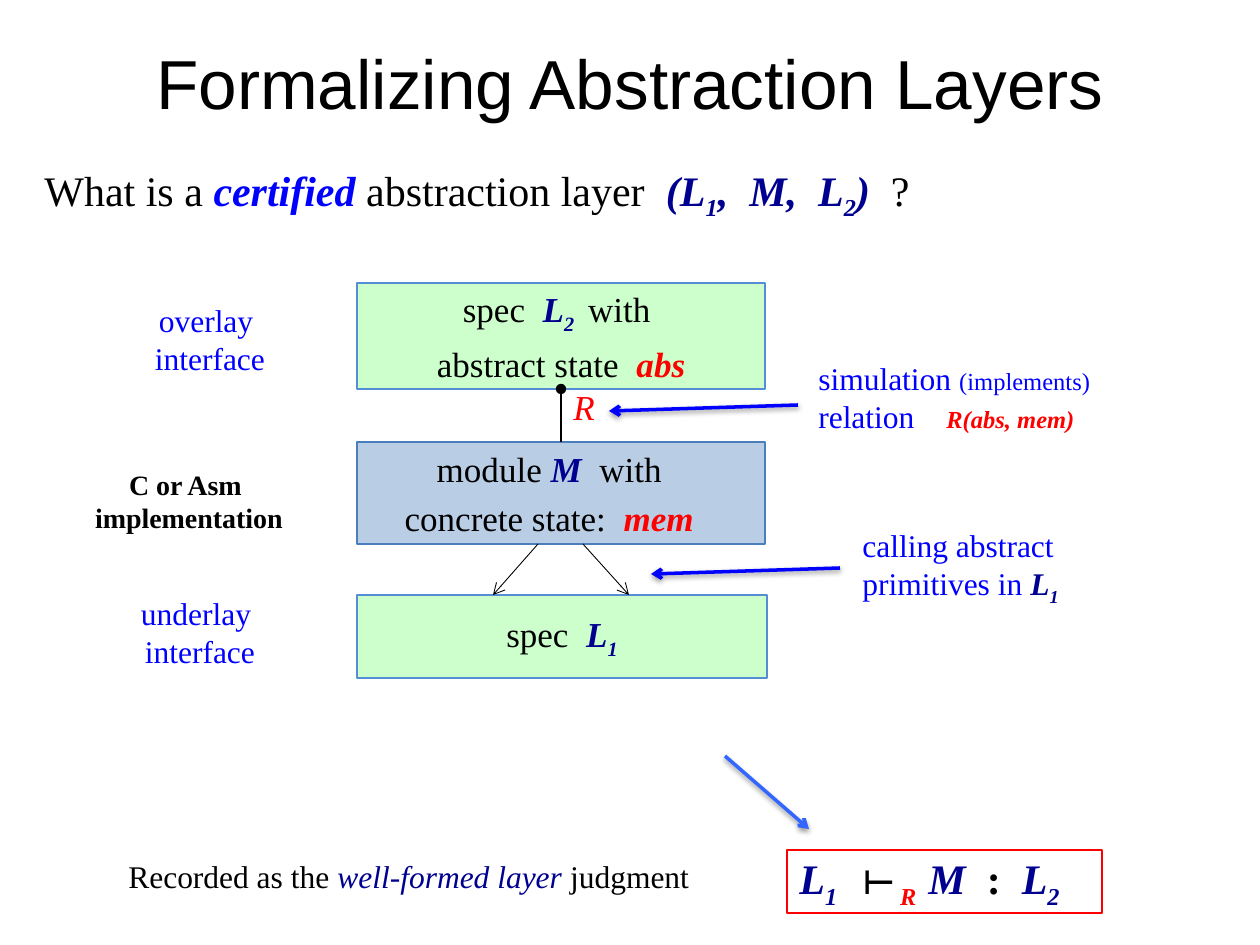
from lxml import etree
from pptx import Presentation
from pptx import util as u
from pptx.dml.color import RGBColor
from pptx.enum import shapes, text
from pptx.oxml.ns import qn

PX = 914400 / 126
SERIF = "Times New Roman"
LEFT, CENTER = text.PP_ALIGN.LEFT, text.PP_ALIGN.CENTER
TOP, MIDDLE = text.MSO_ANCHOR.TOP, text.MSO_ANCHOR.MIDDLE
BLACK, BLUE, NAVY, RED = "000000", "0000FF", "000090", "FF0000"
SKY, GREEN, STEEL = "3366FF", "CCFFCC", "B9CDE5"

STYLES = {
    "plain": (BLACK, {}),
    "strong": (BLACK, {"bold": True}),
    "note": (BLUE, {}),
    "small": (BLUE, {"size": u.Pt(14)}),
    "key": (BLUE, {"bold": True, "italic": True}),
    "math": (NAVY, {"bold": True, "italic": True}),
    "term": (NAVY, {"italic": True}),
    "state": (RED, {"bold": True, "italic": True}),
    "args": (RED, {"bold": True, "italic": True, "size": u.Pt(14)}),
    "relation": (RED, {"italic": True}),
}


def px(n):
    return u.Emu(round(n * PX))


def box(*lengths):
    return [px(n) for n in lengths]


def color(fmt, value):
    fmt.rgb = RGBColor.from_string(value)


def child(parent, tag, **attrs):
    return etree.SubElement(parent, qn(tag), {k: str(v) for k, v in attrs.items()})


def add_run(p, words, style, size):
    subscript = style.endswith("_sub")
    rgb, extra = STYLES[style.removesuffix("_sub")]
    r = p.add_run()
    r.text = words
    fmt = {"name": SERIF, "size": u.Pt(size), "bold": False, "italic": False}
    for name, value in (fmt | extra).items():
        setattr(r.font, name, value)
    color(r.font.color, rgb)
    if subscript:
        r.font._element.set("baseline", "-25000")


def fill_text(tf, lines, size, align=LEFT, anchor=TOP, gap=0, tab=None):
    fmt = {"word_wrap": True, "auto_size": text.MSO_AUTO_SIZE.NONE,
           "vertical_anchor": anchor}
    for name, value in fmt.items():
        setattr(tf, name, value)
    for i, line in enumerate(lines):
        p = tf.add_paragraph() if i else tf.paragraphs[0]
        if tab:
            tabs = child(p._p.get_or_add_pPr(), "a:tabLst")
            child(tabs, "a:tab", pos=px(tab), algn="l")
        p.alignment = align
        if i and gap:
            p.space_before = u.Pt(gap)
        for words, style in line:
            add_run(p, words, style, size)


def add_title(s, words):
    sp = s.shapes.title
    sp.left, sp.top, sp.width, sp.height = box(63, 38, 1134, 88)
    tf = sp.text_frame
    tf.auto_size = text.MSO_AUTO_SIZE.NONE
    tf.vertical_anchor = MIDDLE
    p = tf.paragraphs[0]
    p.alignment = CENTER
    r = p.add_run()
    r.text = words
    r.font.name, r.font.size = "Arial", u.Pt(39.6)
    color(r.font.color, BLACK)


def add_label(s, at, lines, size=18, align=LEFT, tab=None):
    sp = s.shapes.add_textbox(*box(*at))
    fill_text(sp.text_frame, lines, size, align, tab=tab)


def add_block(s, at, lines, fill, line, size=20, align=CENTER, right=None):
    sp = s.shapes.add_shape(shapes.MSO_SHAPE.RECTANGLE, *box(*at))
    sp.shadow.inherit = False
    if fill:
        sp.fill.solid()
        color(sp.fill.fore_color, fill)
    else:
        sp.fill.background()
    color(sp.line.color, line)
    sp.line.width = u.Pt(0.75)
    if right:
        sp.text_frame.margin_right = px(right)
    fill_text(sp.text_frame, lines, size, align, MIDDLE, gap=4)


def add_line(s, ends, rgb, width, tip="arrow", shadow=False):
    c = s.shapes.add_connector(shapes.MSO_CONNECTOR.STRAIGHT, *box(*ends))
    color(c.line.color, rgb)
    c.line.width = u.Pt(width)
    child(c.line._get_or_add_ln(), "a:tailEnd", type=tip)
    effects = child(c._element.spPr, "a:effectLst")
    if shadow:
        outer = child(effects, "a:outerShdw", blurRad=u.Pt(3.1), dist=u.Pt(1.6),
                      dir=5400000, rotWithShape=0)
        child(child(outer, "a:srgbClr", val=BLACK), "a:alpha", val=38000)


def add_layers(s):
    add_block(s, (357, 283, 408, 106), [
        [("spec  ", "plain"), ("L", "math"), ("2 ", "math_sub"), (" with ", "plain")],
        [("abstract state  ", "plain"), ("abs", "state")],
    ], GREEN, "558ED5")
    add_block(s, (357, 442, 408, 102), [
        [("module ", "plain"), ("M  ", "math"), ("with", "plain")],
        [("concrete state:  ", "plain"), ("mem", "state")],
    ], STEEL, "4B7EBC", right=36)
    add_block(s, (357, 595, 410, 83), [
        [("spec  ", "plain"), ("L", "math"), ("1", "math_sub")],
    ], GREEN, "558ED5")
    add_line(s, (561, 442, 561, 389), BLACK, 1, "oval")
    for start, end in ((538, 493), (583, 629)):
        add_line(s, (start, 544, end, 595), BLACK, 0.5)
    add_label(s, (561, 379, 113, 55), [[("R", "relation")]], 20)


def add_side_labels(s):
    for at, words in (((126, 295, 168, 89), "overlay "),
                      ((116, 588, 168, 89), "underlay ")):
        add_label(s, at, [[(words, "note")], [("interface", "note")]], align=CENTER)
    add_label(s, (63, 461, 252, 81),
              [[("C or Asm ", "strong")], [("implementation", "strong")]], 16, CENTER)


def add_callouts(s):
    add_label(s, (806, 353, 328, 89), [
        [("simulation ", "note"), ("(implements)", "small")],
        [("relation\t", "note"), ("R(abs, mem)", "args")],
    ], tab=128)
    add_label(s, (850, 520, 284, 89), [
        [("calling abstract", "note")],
        [("primitives in ", "note"), ("L", "math"), ("1", "math_sub")],
    ])
    for ends, rgb in (((798, 405, 609, 411), BLUE),
                      ((840, 568, 651, 574), BLUE),
                      ((725, 756, 809, 829), SKY)):
        add_line(s, ends, rgb, 2, shadow=True)


def main():
    prs = Presentation()
    prs.slide_width, prs.slide_height = box(1260, 945)
    s = prs.slides.add_slide(prs.slide_layouts[5])
    add_title(s, "Formalizing Abstraction Layers")
    add_label(s, (32, 158, 977, 63), [[
        ("What is a ", "plain"), ("certified", "key"),
        (" abstraction layer  ", "plain"), ("(L", "math"), ("1", "math_sub"),
        (",  M,  L", "math"), ("2", "math_sub"), (")  ", "math"), ("?", "plain"),
    ]], 24)
    add_layers(s)
    add_side_labels(s)
    add_callouts(s)
    add_label(s, (116, 851, 672, 50), [[
        ("Recorded as the ", "plain"), ("well-formed layer ", "term"),
        ("judgment", "plain"),
    ]])
    add_block(s, (787, 850, 315, 63), [[
        ("L", "math"), ("1", "math_sub"), ("  ⊢", "strong"), ("R  ", "state_sub"),
        ("M", "math"), ("  :  ", "strong"), ("L", "math"), ("2", "math_sub"),
    ]], None, RED, 24, LEFT)
    prs.save("out.pptx")


if __name__ == "__main__":
    main()
